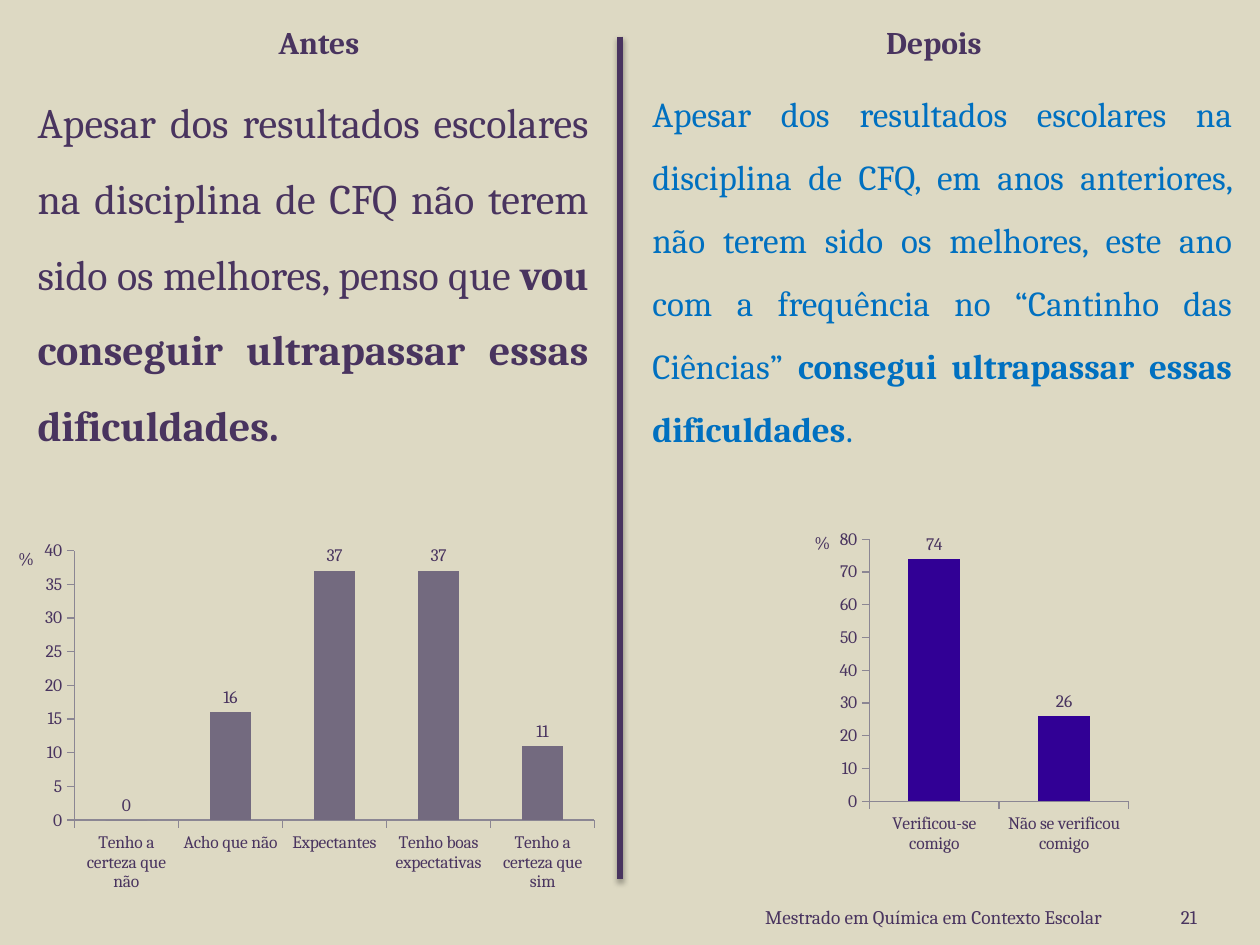
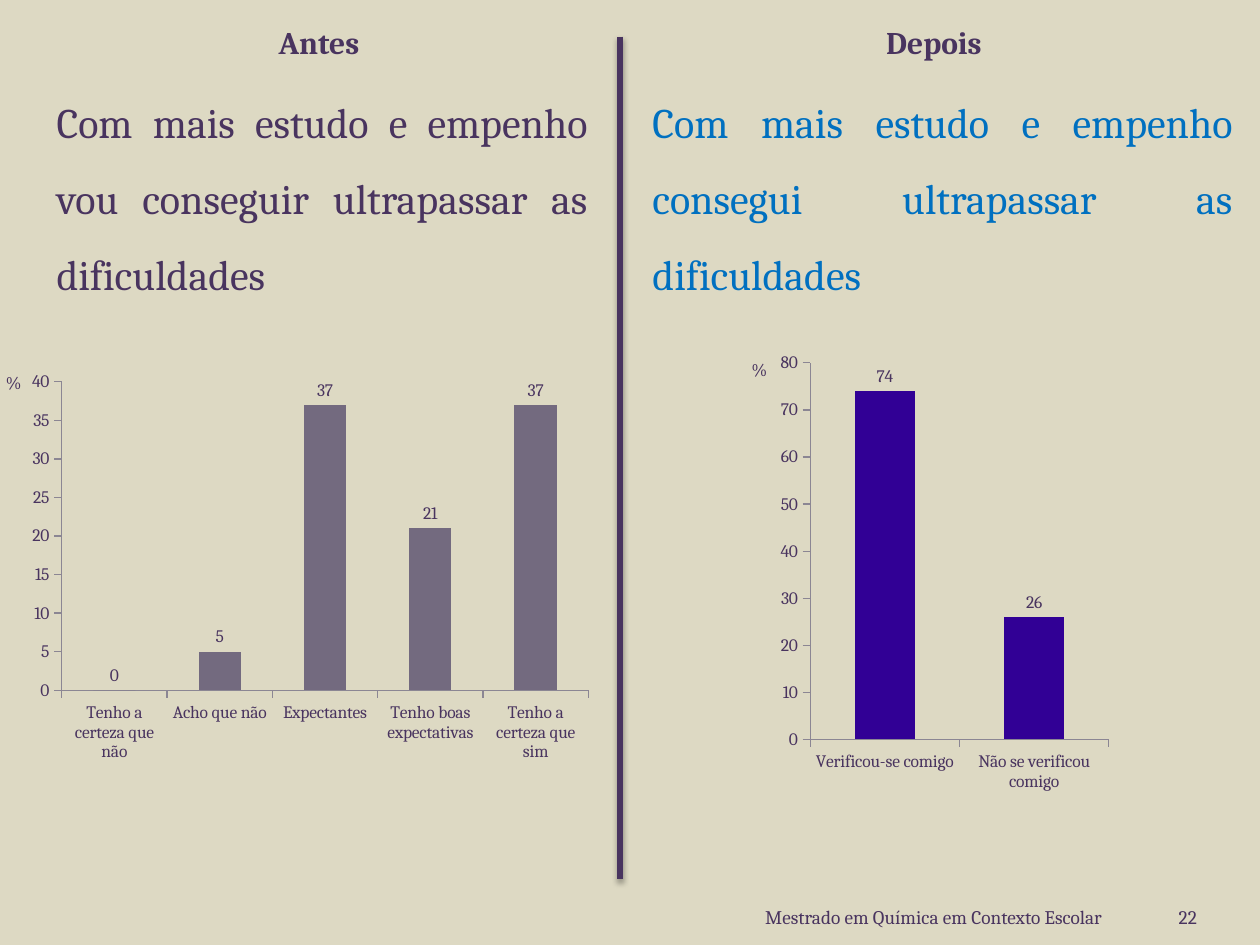
from dataclasses import dataclass

from lxml.etree import SubElement
from pptx import Presentation
from pptx.chart.data import CategoryChartData
from pptx.dml.color import RGBColor
from pptx.enum.chart import XL_CHART_TYPE, XL_LABEL_POSITION, XL_TICK_MARK
from pptx.enum.shapes import MSO_CONNECTOR
from pptx.enum.text import MSO_ANCHOR, PP_ALIGN
from pptx.oxml.ns import qn
from pptx.util import Emu, Inches, Pt

COLUMN = XL_CHART_TYPE.COLUMN_CLUSTERED
OUTER = XL_LABEL_POSITION.OUTSIDE_END
TICK = XL_TICK_MARK.OUTSIDE
LINE = MSO_CONNECTOR.STRAIGHT
LEFT, CENTER, RIGHT = PP_ALIGN.LEFT, PP_ALIGN.CENTER, PP_ALIGN.RIGHT
JUSTIFY = PP_ALIGN.JUSTIFY
MIDDLE, TOP = MSO_ANCHOR.MIDDLE, MSO_ANCHOR.TOP

FONT = "Cambria"
SAND, PLUM, BLUE = "DDD9C3", "49345F", "0070C0"
MAUVE, INDIGO, GRAY = "736A7F", "310095", "8B8693"

FOOTER = "Mestrado em Química em Contexto Escolar"
HOPES = ("Tenho a certeza que não", "Acho que não", "Expectantes",
         "Tenho boas expectativas", "Tenho a certeza que sim")
FACTS = ("Verificou-se comigo", "Não se verificou comigo")

Box = tuple[float, float, float, float]


@dataclass
class Claim:
    """A statement; its runs alternate between plain and bold."""
    box: Box
    size: int
    color: str
    runs: tuple[str, ...]


@dataclass
class Bars:
    """A column chart; every place is in inches on the slide."""
    box: Box
    plot: Box
    unit: tuple[float, float]
    cats: tuple[str, ...]
    vals: tuple[int, ...]
    color: str
    top: int
    step: int


@dataclass
class Page:
    number: int
    claims: tuple[Claim, ...]
    charts: tuple[Bars, ...]


def rgb(code: str) -> RGBColor:
    return RGBColor.from_string(code)


def set_font(font, size: int, color: str, bold: bool = False) -> None:
    font.name, font.size, font.bold = FONT, Pt(size), bold
    font.color.rgb = rgb(color)


def add_text(slide, box: Box, runs: tuple[str, ...], size: int,
             color: str = PLUM, align=LEFT, bold: bool = False, anchor=TOP):
    frame = slide.shapes.add_textbox(*map(Inches, box)).text_frame
    frame.word_wrap = True
    frame.vertical_anchor = anchor
    para = frame.paragraphs[0]
    para.alignment = align
    set_font(para.font, size, color, bold)
    for i, words in enumerate(runs):
        run = para.add_run()
        run.text = words
        if len(runs) > 1:
            run.font.bold = i % 2 == 1
    return frame


def add_claim(slide, claim: Claim) -> None:
    frame = add_text(slide, claim.box, claim.runs, claim.size, claim.color, JUSTIFY)
    para = frame.paragraphs[0]
    para.line_spacing = 1.5
    para.space_before = Pt(15)


def add_rule(slide) -> None:
    rule = slide.shapes.add_connector(
        LINE, Inches(4.92), Inches(0.29), Inches(4.92), Inches(6.98))
    rule.line.color.rgb = rgb(PLUM)
    rule.line.width = Pt(3)
    effects = SubElement(rule.element.spPr, qn("a:effectLst"))
    shade = SubElement(effects, qn("a:outerShdw"), blurRad="40000",
                       dist="23000", dir="5400000", rotWithShape="0")
    tint = SubElement(shade, qn("a:srgbClr"), val="000000")
    SubElement(tint, qn("a:alpha"), val="35000")


def set_layout(node, index: int, **values) -> None:
    """Give a chart part a manual place, as shares of the chart."""
    old = node.find(qn("c:layout"))
    if old is not None:
        node.remove(old)
    layout = SubElement(node, qn("c:layout"))
    node.insert(index, layout)
    manual = SubElement(layout, qn("c:manualLayout"))
    for tag, value in values.items():
        SubElement(manual, qn(f"c:{tag}"), val=str(value))


def add_bars(slide, bars: Bars) -> None:
    data = CategoryChartData(number_format="0")
    data.categories = bars.cats
    data.add_series("Series 1", bars.vals)
    chart = slide.shapes.add_chart(COLUMN, *map(Inches, bars.box), data).chart
    chart.has_legend = chart.has_title = False
    set_font(chart.font, 10, PLUM)

    # Columns and their values
    plot = chart.plots[0]
    plot.gap_width = 150
    plot.vary_by_categories = False
    plot.has_data_labels = True
    plot.data_labels.show_value = True
    plot.data_labels.position = OUTER
    fill = plot.series[0].format.fill
    fill.solid()
    fill.fore_color.rgb = rgb(bars.color)

    # Axes
    for axis in (chart.category_axis, chart.value_axis):
        axis.has_major_gridlines = False
        axis.major_tick_mark = TICK
        axis.format.line.color.rgb = rgb(GRAY)
    scale = chart.value_axis
    scale.minimum_scale, scale.maximum_scale = 0, bars.top
    scale.major_unit = bars.step
    title = scale.axis_title
    title.text_frame.text = "%"
    set_font(title.text_frame.paragraphs[0].font, 10, PLUM)
    body = title.element.find(".//" + qn("a:bodyPr"))
    body.set("rot", "0")
    body.set("vert", "horz")

    # Places inside the chart
    left, top, wide, high = bars.box

    def share(x: float, y: float) -> dict[str, float]:
        return {"x": round((x - left) / wide, 4), "y": round((y - top) / high, 4)}

    x, y, w, h = bars.plot
    area = chart.element.find(".//" + qn("c:plotArea"))
    set_layout(area, 0, layoutTarget="inner", xMode="edge", yMode="edge",
               **share(x, y), w=round(w / wide, 4), h=round(h / high, 4))
    set_layout(title.element, 1, xMode="edge", yMode="edge", **share(*bars.unit))


def add_page(deck, page: Page) -> None:
    slide = deck.slides.add_slide(deck.slide_layouts[6])
    fill = slide.background.fill
    fill.solid()
    fill.fore_color.rgb = rgb(SAND)

    # Footer and page number
    for x, width, words in ((4.75, 4, FOOTER), (8.83, 0.67, str(page.number))):
        frame = add_text(slide, (x, 7.15, width, 0.25), (words,), 11,
                         align=RIGHT, anchor=MIDDLE)
        frame.margin_right = Emu(0)

    # Column heads, divider, statements and charts
    for x, words in ((1.46, "Antes "), (6.34, "Depois ")):
        add_text(slide, (x, 0.13, 2.2, 0.4), (words,), 18, align=CENTER, bold=True)
    add_rule(slide)
    for claim in page.claims:
        add_claim(slide, claim)
    for bars in page.charts:
        add_bars(slide, bars)


AFTER = (5.08, 0.52, 4.8, 6.46)
PAGES = (
    Page(21, (
        Claim((0.2, 0.52, 4.57, 6.46), 24, PLUM, (
            "Apesar dos resultados escolares na disciplina de CFQ não terem "
            "sido os melhores, penso que ",
            "vou conseguir ultrapassar essas dificuldades.")),
        Claim(AFTER, 20, BLUE, (
            "Apesar dos resultados escolares na disciplina de CFQ, em anos "
            "anteriores, não terem sido os melhores, este ano com a frequência "
            "no “Cantinho das Ciências” ",
            "consegui ultrapassar essas dificuldades", ".")),
    ), (
        Bars((0, 4.22, 4.76, 3), (0.59, 4.37, 4.13, 2.14), (0.12, 4.32),
             HOPES, (0, 16, 37, 37, 11), MAUVE, 40, 5),
        Bars((6.26, 4.14, 2.76, 2.68), (6.9, 4.28, 2.06, 2.08), (6.44, 4.19),
             FACTS, (74, 26), INDIGO, 80, 10),
    )),
    Page(22, (
        Claim((0.35, 0.52, 4.41, 6.46), 24, PLUM, (
            "Com mais estudo e empenho vou conseguir ultrapassar as dificuldades",)),
        Claim(AFTER, 24, BLUE, (
            "Com mais estudo e empenho consegui ultrapassar as dificuldades",)),
    ), (
        Bars((5.79, 2.73, 3.08, 3.62), (6.43, 2.88, 2.37, 2.99), (5.94, 2.82),
             FACTS, (74, 26), INDIGO, 80, 10),
        Bars((-0.2, 2.88, 4.96, 3.23), (0.49, 3.03, 4.18, 2.45), (0.02, 2.92),
             HOPES, (0, 5, 37, 21, 37), MAUVE, 40, 5),
    )),
)


def main() -> None:
    deck = Presentation()
    deck.slide_width, deck.slide_height = Inches(10), Inches(7.5)
    for page in PAGES:
        add_page(deck, page)
    deck.save("out.pptx")


if __name__ == "__main__":
    main()
